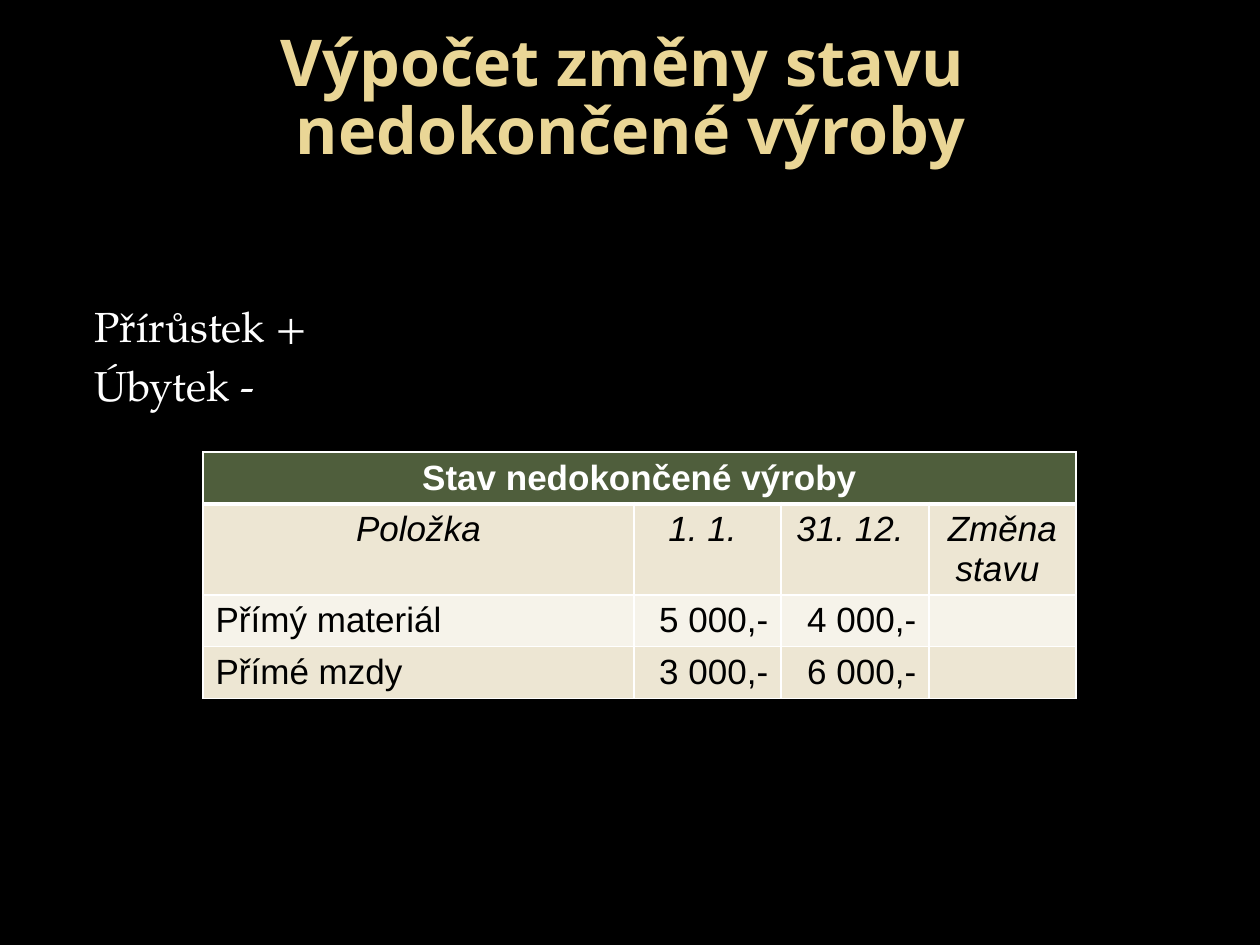
import pptx
import pptx.dml.color
import pptx.enum.text
import pptx.oxml
import pptx.oxml.ns
import pptx.util

PP_ALIGN = pptx.enum.text.PP_ALIGN
ANCHOR = pptx.enum.text.MSO_ANCHOR
PX = 914400 / 126


def px(*lengths):
    """Turn pixel lengths into EMU."""
    return [pptx.util.Emu(round(length * PX)) for length in lengths]


def rgb(color):
    return pptx.dml.color.RGBColor.from_string(color)


presentation = pptx.Presentation()
presentation.slide_width, presentation.slide_height = px(1260, 945)
slide = presentation.slides.add_slide(presentation.slide_layouts[1])
slide.background.fill.solid()
slide.background.fill.fore_color.rgb = rgb("000000")

# Title
title = slide.shapes.title
title.left, title.top, title.width, title.height = px(64, 66, 1134, 68)
title.text_frame.text = "Výpočet změny stavu \vnedokončené výroby"
title.text_frame.vertical_anchor = ANCHOR.MIDDLE
title.text_frame.auto_size = pptx.enum.text.MSO_AUTO_SIZE.NONE
paragraph = title.text_frame.paragraphs[0]
paragraph.alignment = PP_ALIGN.CENTER
paragraph.line_spacing = 0.88
for run in paragraph.runs:
    run.font.name = "Open Sans"
    run.font.size = pptx.util.Pt(36.9)
    run.font.bold = True
    run.font.color.rgb = rgb("EAD696")

# Sign convention
body = slide.placeholders[1]
body.left, body.top, body.width, body.height = px(63, 294, 1134, 576)
body.text_frame.text = "Přírůstek +\nÚbytek -"
for paragraph in body.text_frame.paragraphs:
    paragraph.space_before = pptx.util.Pt(4.8)
    properties = paragraph._p.get_or_add_pPr()
    properties.set("marL", str(px(19)[0]))
    properties.set("indent", "0")
    properties.append(properties.makeelement(pptx.oxml.ns.qn("a:buNone")))
    font = paragraph.runs[0].font
    font.name = "TeX Gyre Pagella"
    font.size = pptx.util.Pt(24)
    font.color.rgb = rgb("FFFFFF")

# Table of work in progress
rows = [
    ["Stav nedokončené výroby", "", "", ""],
    ["Položka", "1. 1. ", "31. 12. ", "Změna stavu "],
    ["Přímý materiál", "5 000,-", "4 000,-", ""],
    ["Přímé mzdy", "3 000,-", "6 000,-", ""],
]
row_fills = ["4F5E3C", "EDE6D3", "F6F3EA", "EDE6D3"]
row_heights = px(52, 91, 51, 52)
column_widths = px(431, 147, 148, 147)

frame = slide.shapes.add_table(4, 4, *px(203, 452, 873, 246))
table = frame.table
for column, width in zip(table.columns, column_widths):
    column.width = width
for row, height in zip(table.rows, row_heights):
    row.height = height
table.cell(0, 0).merge(table.cell(0, 3))

for row_index, texts in enumerate(rows):
    for column_index, text in enumerate(texts):
        cell = table.cell(row_index, column_index)
        cell_properties = cell._tc.get_or_add_tcPr()
        for side in "LRTB":
            thick = (row_index, side) in [(0, "B"), (1, "T")]
            cell_properties.append(pptx.oxml.parse_xml(
                f'<a:ln{side} {pptx.oxml.ns.nsdecls("a")} w="{38100 if thick else 12700}">'
                '<a:solidFill><a:srgbClr val="FFFFFF"/></a:solidFill>'
                f'</a:ln{side}>'))
        cell.fill.solid()
        cell.fill.fore_color.rgb = rgb(row_fills[row_index])
        if not text:
            continue
        cell.text_frame.text = text
        paragraph = cell.text_frame.paragraphs[0]
        if row_index < 2:
            paragraph.alignment = PP_ALIGN.CENTER
        else:
            paragraph.alignment = PP_ALIGN.RIGHT if column_index else PP_ALIGN.LEFT
        font = paragraph.runs[0].font
        font.name = "Arial"
        font.size = pptx.util.Pt(20)
        font.bold = row_index == 0
        font.italic = row_index == 1
        font.color.rgb = rgb("000000" if row_index else "FFFFFF")

presentation.save("out.pptx")
